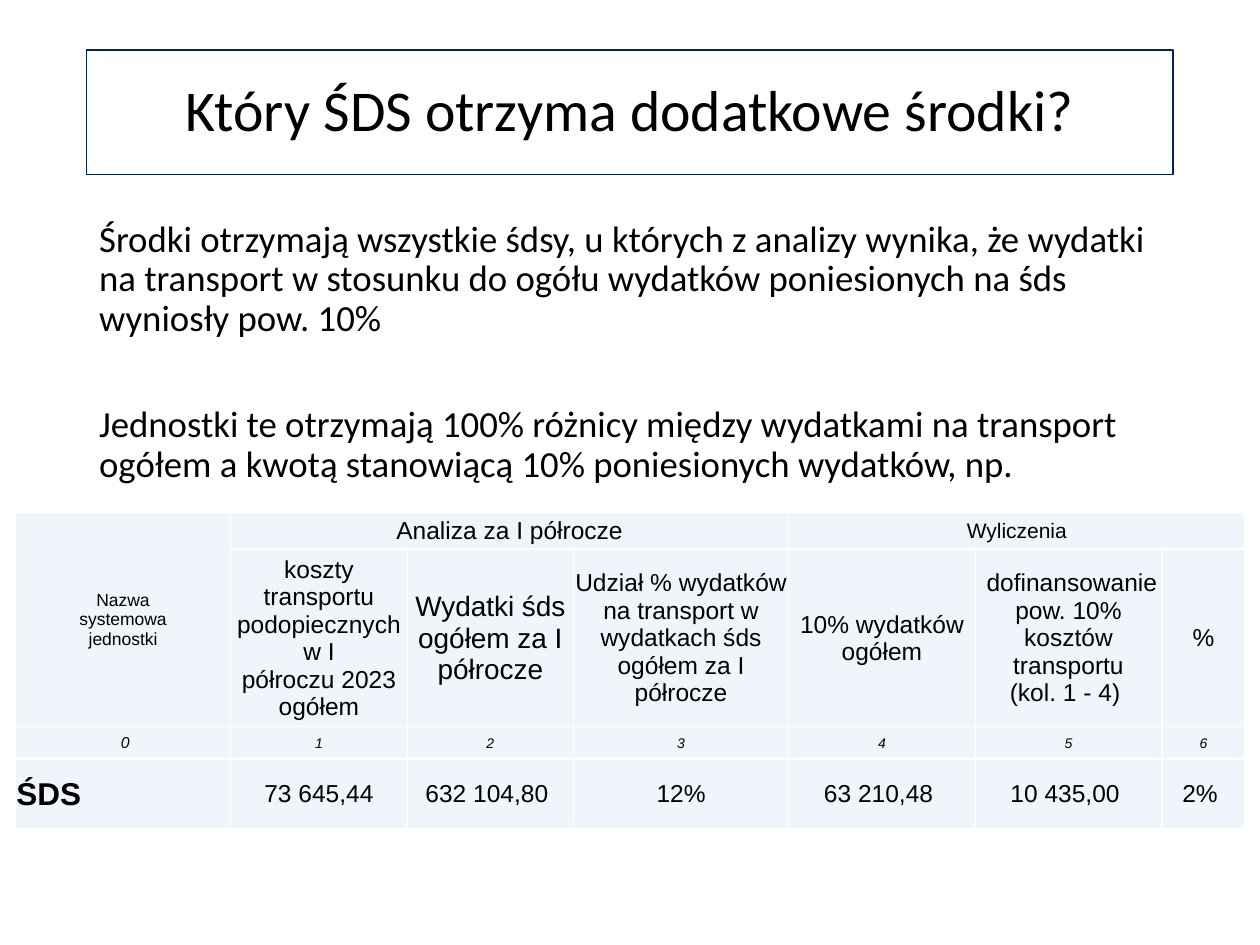
import pptx
import pptx.dml.color
import pptx.enum.text
import pptx.oxml
import pptx.oxml.ns
import pptx.util
from pptx.util import Cm

BLACK = pptx.dml.color.RGBColor(0x00, 0x00, 0x00)
NAVY = pptx.dml.color.RGBColor(0x00, 0x20, 0x60)
PALE_BLUE = pptx.dml.color.RGBColor(0xEF, 0xF5, 0xFB)
LEFT = pptx.enum.text.PP_ALIGN.LEFT
CENTER = pptx.enum.text.PP_ALIGN.CENTER
MIDDLE = pptx.enum.text.MSO_ANCHOR.MIDDLE


def format_paragraph(paragraph, font_name, size, alignment, **font_values):
    paragraph.alignment = alignment
    values = {"name": font_name, "size": pptx.util.Pt(size), **font_values}
    for run in paragraph.runs:
        run.font.color.rgb = BLACK
        for name, value in values.items():
            setattr(run.font, name, value)


def add_white_borders(cell):
    properties = cell._tc.get_or_add_tcPr()
    for position, side in enumerate(("lnL", "lnR", "lnT", "lnB")):
        border = pptx.oxml.parse_xml(
            f'<a:{side} {pptx.oxml.ns.nsdecls("a")} w="12700"><a:solidFill>'
            f'<a:srgbClr val="FFFFFF"/></a:solidFill></a:{side}>')
        properties.insert(position, border)


presentation = pptx.Presentation()
presentation.slide_width = Cm(25.4)
presentation.slide_height = Cm(19.05)
slide = presentation.slides.add_slide(presentation.slide_layouts[5])

# Title in a thin frame
title = slide.shapes.title
for name, value in {"left": Cm(1.75), "top": Cm(1.01),
                    "width": Cm(21.9), "height": Cm(2.51)}.items():
    setattr(title, name, value)
title.line.color.rgb = NAVY
title.line.width = pptx.util.Pt(0.75)
title.text_frame.text = "Który ŚDS otrzyma dodatkowe środki?"
title.text_frame.auto_size = pptx.enum.text.MSO_AUTO_SIZE.NONE
title.text_frame.vertical_anchor = MIDDLE
title.text_frame.paragraphs[0].line_spacing = 0.9
format_paragraph(title.text_frame.paragraphs[0], "Calibri", 33, CENTER)

# Explanation: text and space before each paragraph
explanation = [
    ("Środki otrzymają wszystkie śdsy, u których z analizy wynika, że wydatki "
     "na transport w stosunku do ogółu wydatków poniesionych na śds "
     "wyniosły pow. 10%", 7.5),
    ("Jednostki te otrzymają 100% różnicy między wydatkami na transport "
     "ogółem a kwotą stanowiącą 10% poniesionych wydatków, np.", 38),
]
body = slide.shapes.add_textbox(Cm(1.75), Cm(4.32), Cm(21.9), Cm(12.09))
body.text_frame.word_wrap = True
body.text_frame.text = "\n".join(text for text, space in explanation)
for paragraph, (text, space) in zip(body.text_frame.paragraphs, explanation):
    paragraph.line_spacing = 0.9
    paragraph.space_before = pptx.util.Pt(space)
    format_paragraph(paragraph, "Calibri", 21, LEFT)

# Table: None marks a cell covered by a merged one
column_widths = [4.34, 3.56, 3.35, 4.34, 3.76, 3.76, 1.68]
row_heights = [0.75, 3.05, 0.65, 1.4]
rows = [
    ["Nazwa\vsystemowa\vjednostki", "Analiza za I półrocze", None, None,
     " Wyliczenia ", None, None],
    [None, "koszty transportu\vpodopiecznych w I\vpółroczu 2023 ogółem",
     "Wydatki śds ogółem za I półrocze",
     "Udział % wydatków na transport w wydatkach śds ogółem za I półrocze",
     "10% wydatków ogółem",
     " dofinansowanie pow. 10% kosztów transportu\v(kol. 1 - 4) ", "%"],
    [" 0", "1", "2", "3", "4", "5", "6"],
    ["ŚDS", " 73 645,44 ", "632 104,80 ", "12%", "63 210,48 ", "10 435,00 ", "2% "],
]
row_sizes = [14, 14, 8, 14]
special_sizes = {(0, 0): 10, (0, 4): 12, (1, 2): 16, (2, 0): 9, (3, 0): 18}
merges = [((0, 0), (1, 0)), ((0, 1), (0, 3)), ((0, 4), (0, 6))]
cell_format = {"margin_left": Cm(0.02), "margin_right": Cm(0.02),
               "margin_top": Cm(0.02), "margin_bottom": 0,
               "vertical_anchor": MIDDLE}

table = slide.shapes.add_table(
    len(rows), len(column_widths), Cm(0.31), Cm(10.32),
    Cm(sum(column_widths)), Cm(sum(row_heights))).table
for column, width in zip(table.columns, column_widths):
    column.width = Cm(width)
for row, height in zip(table.rows, row_heights):
    row.height = Cm(height)
for first, last in merges:
    table.cell(*first).merge(table.cell(*last))

for row_index, texts in enumerate(rows):
    for column_index, text in enumerate(texts):
        cell = table.cell(row_index, column_index)
        cell.fill.solid()
        cell.fill.fore_color.rgb = PALE_BLUE
        add_white_borders(cell)
        for name, value in cell_format.items():
            setattr(cell, name, value)
        if text is None:
            continue
        is_unit_name = (row_index, column_index) == (3, 0)
        paragraph = cell.text_frame.paragraphs[0]
        paragraph.text = text
        size = special_sizes.get((row_index, column_index), row_sizes[row_index])
        format_paragraph(paragraph, "Arial", size,
                         LEFT if is_unit_name else CENTER,
                         bold=is_unit_name, italic=row_index == 2)

presentation.save("out.pptx")
